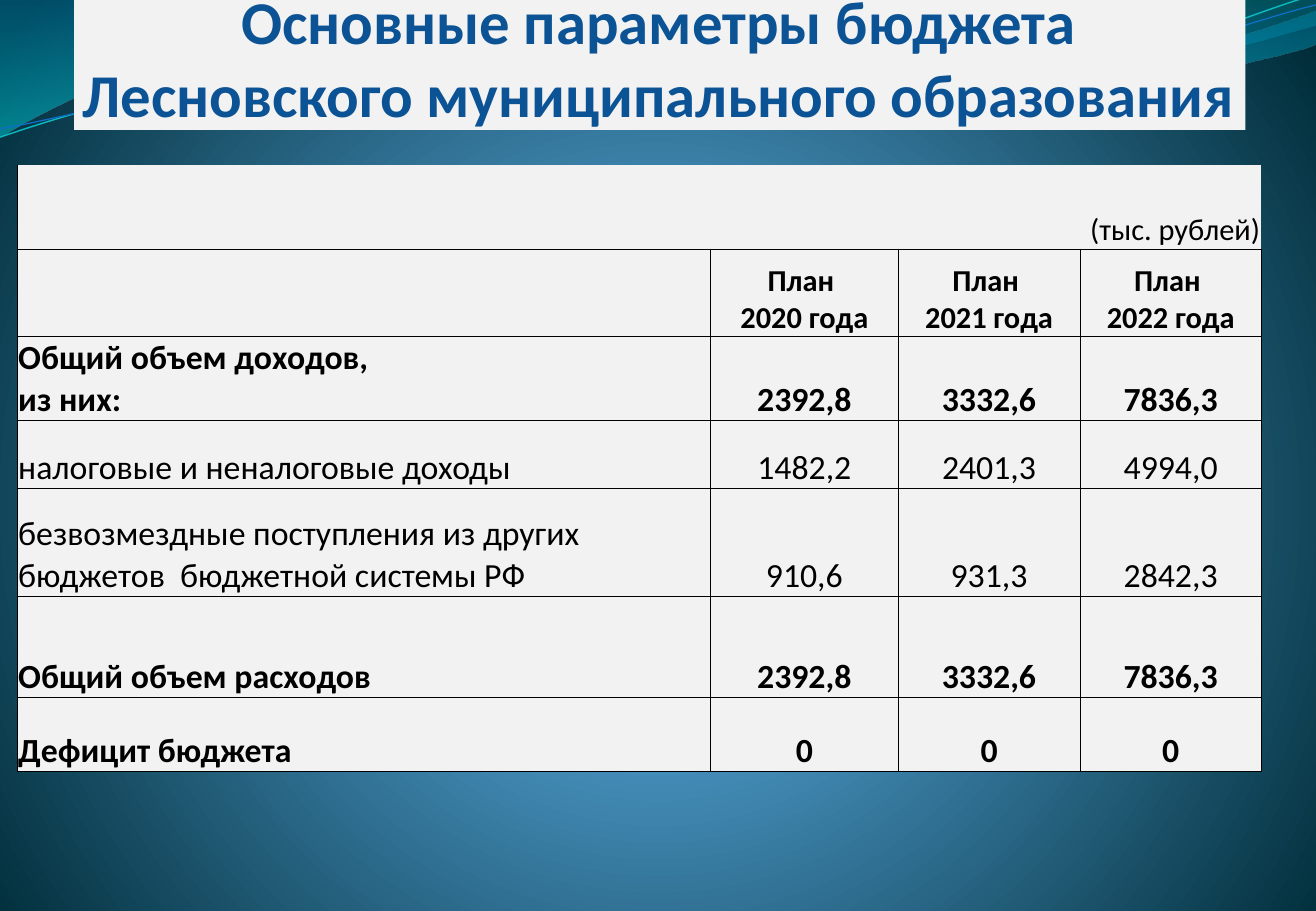
from math import cos, radians, sin

from lxml.etree import SubElement
from pptx import Presentation
from pptx.dml.color import RGBColor
from pptx.enum.shapes import MSO_SHAPE
from pptx.enum.text import MSO_ANCHOR as ANCHOR, PP_ALIGN as ALIGN
from pptx.oxml import parse_xml
from pptx.oxml.ns import nsdecls, qn
from pptx.util import Inches, Pt

COLORS = {"panel": "F2F2F2", "title": "0B5394", "text": "000000",
          "teal": "0AB8BF", "blue": "0F6FC6"}
FONT = "Calibri"
BACKGROUND = [(0, "4AA0D6", 100), (25, "4C98C7", 100), (100, "002C38", 100)]
RADIAL = ('<a:path path="circle"><a:fillToRect l="10000" t="110000" '
          'r="10000" b="100000"/></a:path>')
DOWNWARD = '<a:lin ang="5400000" scaled="0"/>'
CURVE_TILT = 357.3
CURVE_CENTER = (5.41, 0.58)

WIDE_WAVE = [
    [(0, -0.01)], [(4.77, -0.01)],
    [(5.15, 0.17), (7.19, 0.63), (8.22, 0.63)],
    [(9.24, 0.63), (10.38, 0.26), (10.83, 0.09)],
    [(10.85, 0.36)],
    [(10.65, 0.44), (9.42, 0.76), (8.08, 0.75)],
    [(6.74, 0.75), (4.14, 0.28), (2.79, 0.34)],
    [(1.4, 0.35), (0.5, 0.83), (-0.01, 1.13)],
    [(0, -0.01)],
]
RIGHT_WAVE = [
    [(5.19, -0.01)],
    [(5.52, 0.11), (7.39, 0.62), (8.33, 0.65)],
    [(9.27, 0.69), (10.42, 0.32), (10.83, 0.21)],
    [(10.83, 0)], [(5.19, -0.01)],
]
TEAL_CURVE = [
    [(0, 1.13)],
    [(0.52, 0.95), (1.71, 0.58), (3, 0.53)],
    [(4.28, 0.47), (6.42, 0.88), (7.72, 0.79)],
    [(9.02, 0.69), (10.17, 0.14), (10.81, -0.04)],
]
BLUE_CURVE = [
    [(0, 1.06)],
    [(0.51, 0.98), (1.77, 0.62), (3.07, 0.57)],
    [(4.36, 0.52), (6.47, 0.83), (7.76, 0.74)],
    [(9.06, 0.66), (10.2, 0.19), (10.83, 0.04)],
]

COLUMN_WIDTHS = [5.71, 1.54, 1.5, 1.49]
ROW_HEIGHTS = [0.69, 0.72, 0.69, 0.56, 0.89, 0.83, 0.61]
BUDGET = [
    (["", "План \n2020 года", "План \n2021 года", "План \n2022 года"], 18, True),
    (["Общий объем доходов,\nиз них:", "2392,8", "3332,6", "7836,3"], 20, True),
    (["налоговые и неналоговые доходы", "1482,2", "2401,3", "4994,0"], 20, False),
    (["безвозмездные поступления из других бюджетов  бюджетной системы РФ",
      "910,6", "931,3", "2842,3"], 20, False),
    (["Общий объем расходов", "2392,8", "3332,6", "7836,3"], 20, True),
    (["Дефицит бюджета", "0", "0", "0"], 20, True),
]


def rgb(name):
    return RGBColor.from_string(COLORS[name])


def gradient(stops, direction):
    marks = "".join(
        f'<a:gs pos="{position * 1000}"><a:srgbClr val="{color}">'
        f'<a:alpha val="{opacity * 1000}"/></a:srgbClr></a:gs>'
        for position, color, opacity in stops)
    return parse_xml(f'<a:gradFill {nsdecls("a")} rotWithShape="1">'
                     f'<a:gsLst>{marks}</a:gsLst>{direction}</a:gradFill>')


def write_text(frame, text, size, color="text", bold=False, align=ALIGN.LEFT):
    frame.word_wrap = True
    for index, line in enumerate(text.split("\n")):
        paragraph = frame.paragraphs[0] if index == 0 else frame.add_paragraph()
        paragraph.alignment = align
        font = paragraph.font
        if line:
            run = paragraph.add_run()
            run.text = line
            font = run.font
        font.name = FONT
        font.size = Pt(size)
        font.bold = bold
        font.color.rgb = rgb(color)


def turn(point, degrees):
    angle = radians(degrees)
    x, y = (value - center for value, center in zip(point, CURVE_CENTER))
    return (CURVE_CENTER[0] + x * cos(angle) - y * sin(angle),
            CURVE_CENTER[1] + x * sin(angle) + y * cos(angle))


def add_outline(slide, segments, close):
    segments = [[(Inches(x), Inches(y)) for x, y in segment] for segment in segments]
    anchors = [segment[-1] for segment in segments]
    builder = slide.shapes.build_freeform(*anchors[0])
    builder.add_line_segments(anchors[1:], close=close)
    shape = builder.convert_to_shape()
    shape.shadow.inherit = False
    outline = shape.element.find(".//" + qn("a:path"))
    for index, segment in enumerate(segments):
        if len(segment) == 3:
            bend = outline[index]
            bend.tag = qn("a:cubicBezTo")
            bend.clear()
            for x, y in segment:
                SubElement(bend, qn("a:pt"), x=str(x - shape.left), y=str(y - shape.top))
    return shape


def add_wave(slide, segments, stops):
    shape = add_outline(slide, segments, True)
    shape.line.fill.background()
    geometry = shape.element.find(".//" + qn("a:custGeom"))
    geometry.addnext(gradient(stops, DOWNWARD))


def add_curve(slide, segments, color, width):
    level = [[turn(point, -CURVE_TILT) for point in segment] for segment in segments]
    shape = add_outline(slide, level, False)
    shape.rotation = CURVE_TILT
    shape.fill.background()
    shape.line.color.rgb = rgb(color)
    shape.line.width = Pt(width)


def set_background(slide):
    slide.background.fill.solid()
    solid = slide.element.find(".//" + qn("p:bgPr")).find(qn("a:solidFill"))
    solid.getparent().replace(solid, gradient(BACKGROUND, RADIAL))


def add_title(slide, text):
    shape = slide.shapes.add_shape(
        MSO_SHAPE.RECTANGLE, Inches(0.61), Inches(0), Inches(9.64), Inches(1.07))
    shape.shadow.inherit = False
    shape.fill.solid()
    shape.fill.fore_color.rgb = rgb("panel")
    shape.line.fill.background()
    frame = shape.text_frame
    frame.margin_left = frame.margin_top = frame.margin_bottom = 0
    frame.margin_right = Inches(0.02)
    frame.vertical_anchor = ANCHOR.BOTTOM
    write_text(frame, text, 36, "title", bold=True, align=ALIGN.CENTER)


def style_cell(cell, sides):
    cell.margin_left = cell.margin_right = cell.margin_top = Inches(0.01)
    cell.margin_bottom = 0
    cell.vertical_anchor = ANCHOR.BOTTOM
    properties = cell._tc.get_or_add_tcPr()
    for side in "LRTB":
        border = SubElement(properties, qn(f"a:ln{side}"), w=str(Pt(0.5)))
        if side in sides:
            fill = SubElement(border, qn("a:solidFill"))
            SubElement(fill, qn("a:srgbClr"), val=COLORS["text"])
        else:
            SubElement(border, qn("a:noFill"))
    cell.fill.solid()
    cell.fill.fore_color.rgb = rgb("panel")


def add_budget_table(slide):
    table = slide.shapes.add_table(
        len(ROW_HEIGHTS), len(COLUMN_WIDTHS), Inches(0.14), Inches(1.36),
        Inches(sum(COLUMN_WIDTHS)), Inches(sum(ROW_HEIGHTS))).table
    table.first_row = table.horz_banding = False
    for column, width in zip(table.columns, COLUMN_WIDTHS):
        column.width = Inches(width)
    for row, height in zip(table.rows, ROW_HEIGHTS):
        row.height = Inches(height)
    for index in range(len(COLUMN_WIDTHS)):
        style_cell(table.cell(0, index), "LB" if index == 0 else "B")
    unit_cell = table.cell(0, 0)
    unit_cell.merge(table.cell(0, len(COLUMN_WIDTHS) - 1))
    write_text(unit_cell.text_frame, "(тыс. рублей)", 18, align=ALIGN.RIGHT)
    for row_index, (texts, size, bold) in enumerate(BUDGET, 1):
        for column_index, text in enumerate(texts):
            cell = table.cell(row_index, column_index)
            style_cell(cell, "LRTB")
            align = ALIGN.CENTER if column_index else ALIGN.LEFT
            write_text(cell.text_frame, text, size, bold=bold, align=align)


def main():
    presentation = Presentation()
    presentation.slide_width = Inches(10.83)
    presentation.slide_height = Inches(7.5)
    slide = presentation.slides.add_slide(presentation.slide_layouts[6])
    set_background(slide)
    add_wave(slide, WIDE_WAVE, [(0, "0074A1", 45), (100, "00C6CF", 55)])
    add_wave(slide, RIGHT_WAVE, [(0, "00A1A9", 30), (80, "008BBF", 45)])
    add_curve(slide, TEAL_CURVE, "teal", 0.85)
    add_curve(slide, BLUE_CURVE, "blue", 0.75)
    add_title(slide, "Основные параметры бюджета Лесновского муниципального образования")
    add_budget_table(slide)
    presentation.save("out.pptx")


if __name__ == "__main__":
    main()
